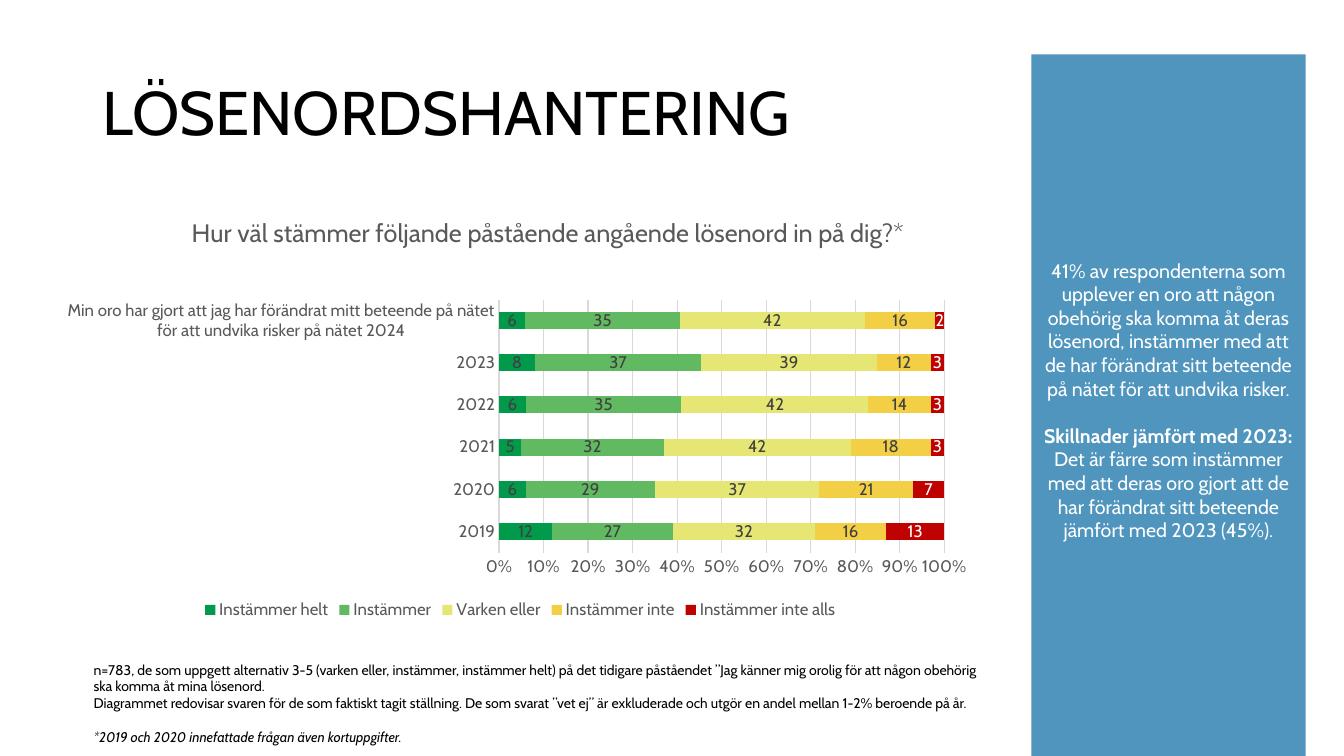
"""Build a survey slide on password habits with a stacked bar chart and a side panel."""
import dataclasses
import pptx
import pptx.chart.data
import pptx.dml.color
import pptx.enum.chart
import pptx.enum.shapes
import pptx.enum.text
import pptx.oxml
import pptx.util

TITLE = "LÖSENORDSHANTERING"
ASK = "Hur väl stämmer följande påstående angående lösenord in på dig?*"
CATS = ["2019", "2020", "2021", "2022", "2023",
        "Min oro har gjort att jag har förändrat mitt beteende på nätet "
        "för att undvika risker på nätet 2024"]
DATA = [
    ("Instämmer helt", (12, 6, 5, 6, 8, 6), "009A4A", "404040"),
    ("Instämmer", (27, 29, 32, 35, 37, 35), "61B961", "404040"),
    ("Varken eller", (32, 37, 42, 42, 39, 42), "E5E674", "404040"),
    ("Instämmer inte", (16, 21, 18, 14, 12, 16), "F2CF44", "404040"),
    ("Instämmer inte alls", (13, 7, 3, 3, 3, 2), "BF0100", "FFFFFF"),
]
NOTES = [
    ("n=783, de som uppgett alternativ 3-5 (varken eller, instämmer, instämmer helt) "
     "på det tidigare påståendet ”Jag känner mig orolig för att någon obehörig\n"
     "ska komma åt mina lösenord.", {}),
    ("Diagrammet redovisar svaren för de som faktiskt tagit ställning. De som svarat "
     "”vet ej” är exkluderade och utgör en andel mellan 1-2% beroende på år.", {}),
    ("*2019 och 2020 innefattade frågan även kortuppgifter.",
     {"slant": True, "gap": 12}),
]
PANEL = [
    ("41% av respondenterna som upplever en oro att någon obehörig ska komma åt deras "
     "lösenord, instämmer med att de har förändrat sitt beteende på nätet för att "
     "undvika risker.", {}),
    ("Skillnader jämfört med 2023:", {"bold": True, "gap": 17}),
    ("Det är färre som instämmer med att deras oro gjort att de har förändrat sitt "
     "beteende jämfört med 2023 (45%).", {}),
]
AREAS = {
    "title": (6.9, 5.6, 86.27, 19.33),
    "chart": (4.28, 22.53, 68.87, 60),
    "notes": (6.23, 86.8, 74.27, 12.53),
    "panel": (76.74, 7.2, 20.41, 92.8),
}
PLOT = {"x": 0.477, "y": 0.285, "w": 0.481, "h": 0.558}
HEAD = {"x": 0.14, "y": 0.09}


@dataclasses.dataclass(frozen=True)
class Theme:
    font: str = "Cabin"
    ink: str = "000000"
    grey: str = "595959"
    rule: str = "D9D9D9"
    blue: str = "4F95BD"
    white: str = "FFFFFF"
    title: int = 44
    ask: int = 18
    panel: int = 14
    chart: int = 12
    note: int = 10


LOOK = Theme()
ALIGN = pptx.enum.text.PP_ALIGN
MID = pptx.enum.text.MSO_ANCHOR.MIDDLE


def color(code):
    return pptx.dml.color.RGBColor.from_string(code)


def style(font, size, tint, bold=False, slant=False):
    font.name, font.size = LOOK.font, pptx.util.Pt(size)
    font.bold, font.italic = bold, slant
    font.color.rgb = color(tint)


def write(para, text, size, tint, align=ALIGN.LEFT, gap=0, **face):
    para.alignment = align
    para.space_before = pptx.util.Pt(gap)
    for n, line in enumerate(text.split("\n")):
        if n:
            para.add_line_break()
        run = para.add_run()
        run.text = line
        style(run.font, size, tint, **face)


def fill(frame, items, **base):
    frame.word_wrap = True
    for n, (text, extra) in enumerate(items):
        para = frame.add_paragraph() if n else frame.paragraphs[0]
        write(para, text, **base, **extra)


def layout(kind, spots):
    uri = "http://schemas.openxmlformats.org/drawingml/2006/chart"
    inner = '<c:layoutTarget val="inner"/>' if kind == "inner" else ""
    modes = "".join(f'<c:{k}Mode val="edge"/>' for k in "xy")
    sizes = "".join(f'<c:{k} val="{v}"/>' for k, v in spots.items())
    return pptx.oxml.parse_xml(
        f'<c:layout xmlns:c="{uri}"><c:manualLayout>{inner}{modes}{sizes}'
        "</c:manualLayout></c:layout>")


def pin(node, new):
    for old in node.findall(new.tag):
        node.remove(old)
    has_text = node.find(new.tag.replace("layout", "tx")) is not None
    node.insert(1 if has_text else 0, new)


def draw_chart(slide, area):
    enum = pptx.enum.chart
    data = pptx.chart.data.CategoryChartData(number_format="0")
    data.categories = CATS
    for name, vals, _, _ in DATA:
        data.add_series(name, vals)
    chart = slide.shapes.add_chart(
        enum.XL_CHART_TYPE.BAR_STACKED_100, *area, data).chart
    style(chart.font, LOOK.note, LOOK.ink)
    write(chart.chart_title.text_frame.paragraphs[0], ASK, LOOK.ask, LOOK.grey,
          align=ALIGN.CENTER)
    chart.chart_title.include_in_layout = False
    pin(chart.chart_title._element, layout("title", HEAD))

    plot = chart.plots[0]
    plot.gap_width, plot.overlap, plot.vary_by_categories = 150, 100, False
    pin(chart._chartSpace.chart.plotArea, layout("inner", PLOT))
    for bar, (_, _, tone, tint) in zip(plot.series, DATA):
        bar.format.fill.solid()
        bar.format.fill.fore_color.rgb = color(tone)
        tags = bar.data_labels
        tags.show_value = True
        tags.position = enum.XL_LABEL_POSITION.CENTER
        style(tags.font, LOOK.chart, tint)

    cats, vals = chart.category_axis, chart.value_axis
    for axis in (cats, vals):
        axis.major_tick_mark = axis.minor_tick_mark = enum.XL_TICK_MARK.NONE
        style(axis.tick_labels.font, LOOK.chart, LOOK.grey)
    vals.has_major_gridlines = True
    for line in (cats.format.line, vals.major_gridlines.format.line):
        line.color.rgb = color(LOOK.rule)
        line.width = pptx.util.Pt(0.75)
    vals.format.line.fill.background()
    vals.tick_labels.number_format = "0%"
    vals.tick_labels.number_format_is_linked = False

    chart.has_legend = True
    chart.legend.position = enum.XL_LEGEND_POSITION.BOTTOM
    chart.legend.include_in_layout = False
    style(chart.legend.font, LOOK.chart, LOOK.grey)


def main():
    deck = pptx.Presentation()
    deck.slide_width = pptx.util.Inches(13.33)
    deck.slide_height = pptx.util.Inches(7.5)
    slide = deck.slides.add_slide(deck.slide_layouts[5])
    sides = (deck.slide_width, deck.slide_height) * 2
    areas = {key: [int(side * part / 100) for side, part in zip(sides, parts)]
             for key, parts in AREAS.items()}

    title = slide.shapes.title
    title.left, title.top, title.width, title.height = areas["title"]
    title.text_frame.vertical_anchor = MID
    fill(title.text_frame, [(TITLE, {})], size=LOOK.title, tint=LOOK.ink)
    title.text_frame.paragraphs[0].line_spacing = 0.9

    draw_chart(slide, areas["chart"])

    notes = slide.shapes.add_textbox(*areas["notes"])
    fill(notes.text_frame, NOTES, size=LOOK.note, tint=LOOK.ink)

    panel = slide.shapes.add_shape(
        pptx.enum.shapes.MSO_SHAPE.RECTANGLE, *areas["panel"])
    panel.shadow.inherit = False
    panel.fill.solid()
    panel.fill.fore_color.rgb = color(LOOK.blue)
    panel.line.fill.background()
    panel.text_frame.vertical_anchor = MID
    panel.text_frame.margin_bottom = pptx.util.Inches(0.15)
    fill(panel.text_frame, PANEL, size=LOOK.panel, tint=LOOK.white,
         align=ALIGN.CENTER)
    deck.save("out.pptx")


if __name__ == "__main__":
    main()
